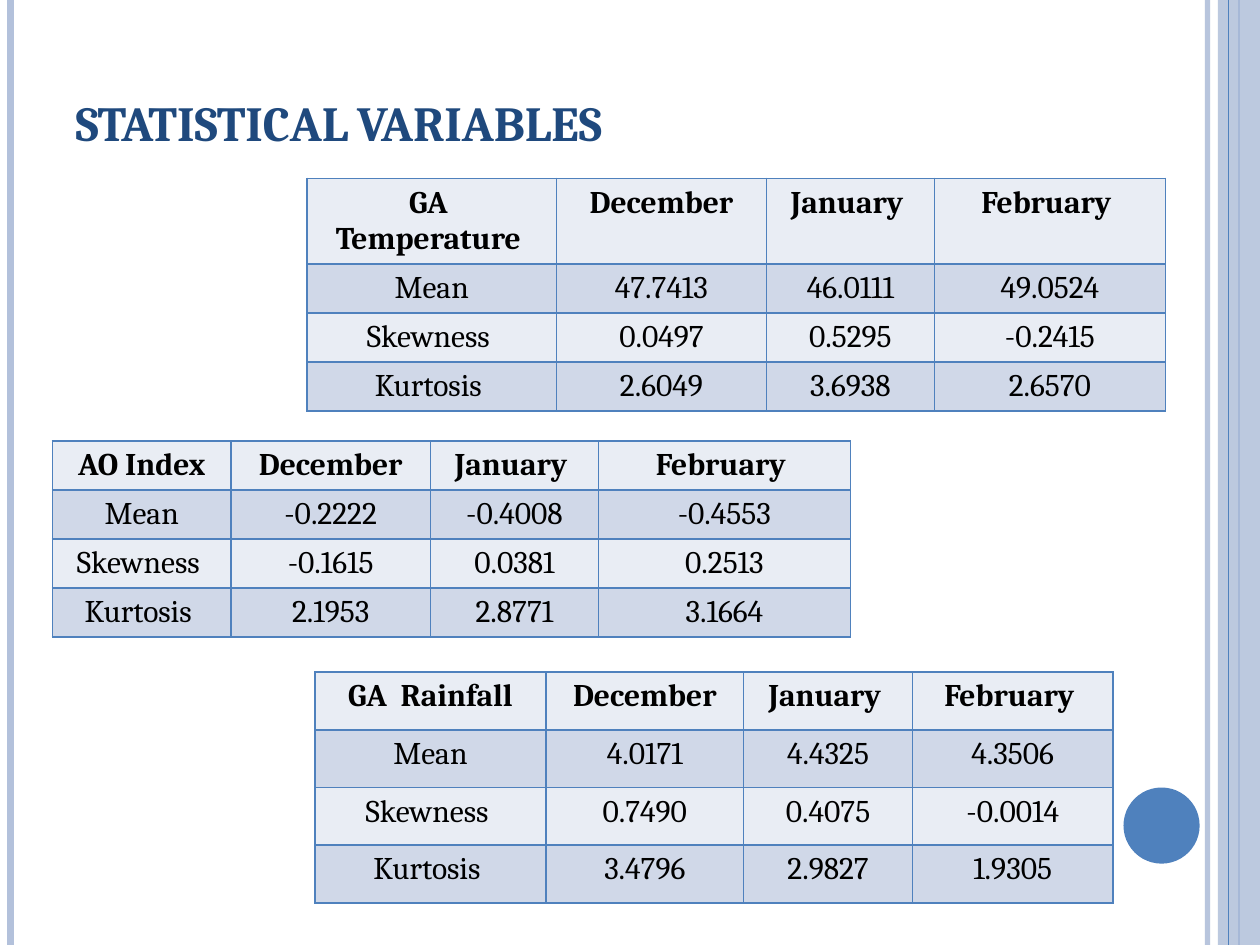
from dataclasses import dataclass

from lxml import etree
from pptx import Presentation
from pptx.dml.color import RGBColor
from pptx.enum import shapes, text
from pptx.oxml import ns
from pptx.util import Pt


@dataclass(frozen=True)
class Theme:
    font: str = "Cambria"
    title_size: int = 28
    cell_size: int = 18
    title: str = "1F497D"
    ink: str = "000000"
    accent: str = "4F81BD"
    pale: str = "B3C1DB"
    bands: tuple = ("E9EDF4", "D0D8E8")


THEME = Theme()
MONTHS = ["December", "January ", "February "]
STATISTICS = ["Mean", "Skewness ", "Kurtosis "]

# Name, left, top, column widths, header height, row height, values by statistic
TABLES = [
    ("AO Index", 30, 252, (102, 114, 96, 144), 28, 28,
     [("-0.2222", "-0.4008", "-0.4553"),
      ("-0.1615", "0.0381", "0.2513"),
      ("2.1953", "2.8771", "3.1664")]),
    ("GA  Temperature ", 175.5, 102, (142.5, 120, 96, 132), 48.5, 28,
     [("47.7413", "46.0111", "49.0524"),
      ("0.0497", "0.5295", "-0.2415"),
      ("2.6049", "3.6938", "2.6570")]),
    ("GA  Rainfall", 180, 384, (132, 113, 96.5, 114.5), 33, 33,
     [("4.0171", "4.4325", "4.3506"),
      ("0.7490", "0.4075", "-0.0014"),
      ("3.4796", "2.9827", "1.9305")]),
]


def rgb(color):
    return RGBColor.from_string(color)


def set_opacity(parent, percent):
    """Make the first solid colour inside parent partly transparent."""
    color = parent.find(".//" + ns.qn("a:srgbClr"))
    etree.SubElement(color, ns.qn("a:alpha"), val=str(percent * 1000))


def style_runs(p, size, color, bold):
    for r in p.runs:
        r.font.name = THEME.font
        r.font.size = Pt(size)
        r.font.bold = bold
        r.font.color.rgb = rgb(color)


def add_rule(s, x, width, color, opacity=100):
    """Full-height vertical rule."""
    line = s.shapes.add_connector(
        shapes.MSO_CONNECTOR.STRAIGHT, Pt(x), Pt(0), Pt(x), Pt(540))
    line.line.width = Pt(width)
    line.line.color.rgb = rgb(color)
    sp_pr = line._element.spPr
    if opacity < 100:
        set_opacity(sp_pr, opacity)
    etree.SubElement(sp_pr, ns.qn("a:effectLst"))


def add_block(s, kind, left, top, width, height, color, opacity=100):
    sp = s.shapes.add_shape(kind, Pt(left), Pt(top), Pt(width), Pt(height))
    sp.shadow.inherit = False
    sp.fill.solid()
    sp.fill.fore_color.rgb = rgb(color)
    sp.line.fill.background()
    if opacity < 100:
        set_opacity(sp._element.spPr, opacity)


def set_title(s, title):
    sp = s.shapes.title
    sp.left, sp.top, sp.width, sp.height = Pt(36), Pt(0), Pt(648), Pt(90)
    tf = sp.text_frame
    tf.text = title
    tf.auto_size = text.MSO_AUTO_SIZE.NONE
    tf.vertical_anchor = text.MSO_ANCHOR.BOTTOM
    p = tf.paragraphs[0]
    p.alignment = text.PP_ALIGN.LEFT
    style_runs(p, THEME.title_size, THEME.title, True)
    p.runs[0].font._element.set("cap", "small")


def add_borders(cell):
    tc_pr = cell._tc.get_or_add_tcPr()
    for side in ("lnL", "lnR", "lnT", "lnB"):
        ln = etree.SubElement(tc_pr, ns.qn("a:" + side), w=str(Pt(1)))
        fill = etree.SubElement(ln, ns.qn("a:solidFill"))
        etree.SubElement(fill, ns.qn("a:srgbClr"), val=THEME.accent)


def fill_cell(cell, value, band, bold):
    add_borders(cell)
    cell.fill.solid()
    cell.fill.fore_color.rgb = rgb(band)
    cell.text_frame.text = value
    p = cell.text_frame.paragraphs[0]
    p.alignment = text.PP_ALIGN.CENTER
    style_runs(p, THEME.cell_size, THEME.ink, bold)


def add_statistics(s, name, left, top, widths, header_height, row_height, values):
    rows = [[name, *MONTHS]]
    rows += [[label, *row] for label, row in zip(STATISTICS, values)]
    height = header_height + row_height * len(values)
    table = s.shapes.add_table(
        len(rows), len(widths), Pt(left), Pt(top), Pt(sum(widths)), Pt(height)).table
    for column, width in zip(table.columns, widths):
        column.width = Pt(width)
    for i, row in enumerate(rows):
        table.rows[i].height = Pt(row_height if i else header_height)
        for j, value in enumerate(row):
            fill_cell(table.cell(i, j), value, THEME.bands[i % 2], i == 0)


def main():
    prs = Presentation()
    prs.slide_width, prs.slide_height = Pt(720), Pt(540)
    s = prs.slides.add_slide(prs.slide_layouts[5])

    # Side decoration
    add_rule(s, 690, 3, THEME.pale, 93)
    add_rule(s, 6, 4.5, THEME.pale)
    add_rule(s, 708, 1.5, THEME.accent)
    add_block(s, shapes.MSO_SHAPE.RECTANGLE, 696, 0, 24, 540, THEME.pale, 87)
    add_rule(s, 702, 0.75, THEME.accent)
    add_block(s, shapes.MSO_SHAPE.OVAL, 642, 450, 43.5, 43.5, THEME.accent)

    # Title and tables
    set_title(s, "STATISTICAL VARIABLES")
    for table in TABLES:
        add_statistics(s, *table)

    prs.save("out.pptx")


if __name__ == "__main__":
    main()
